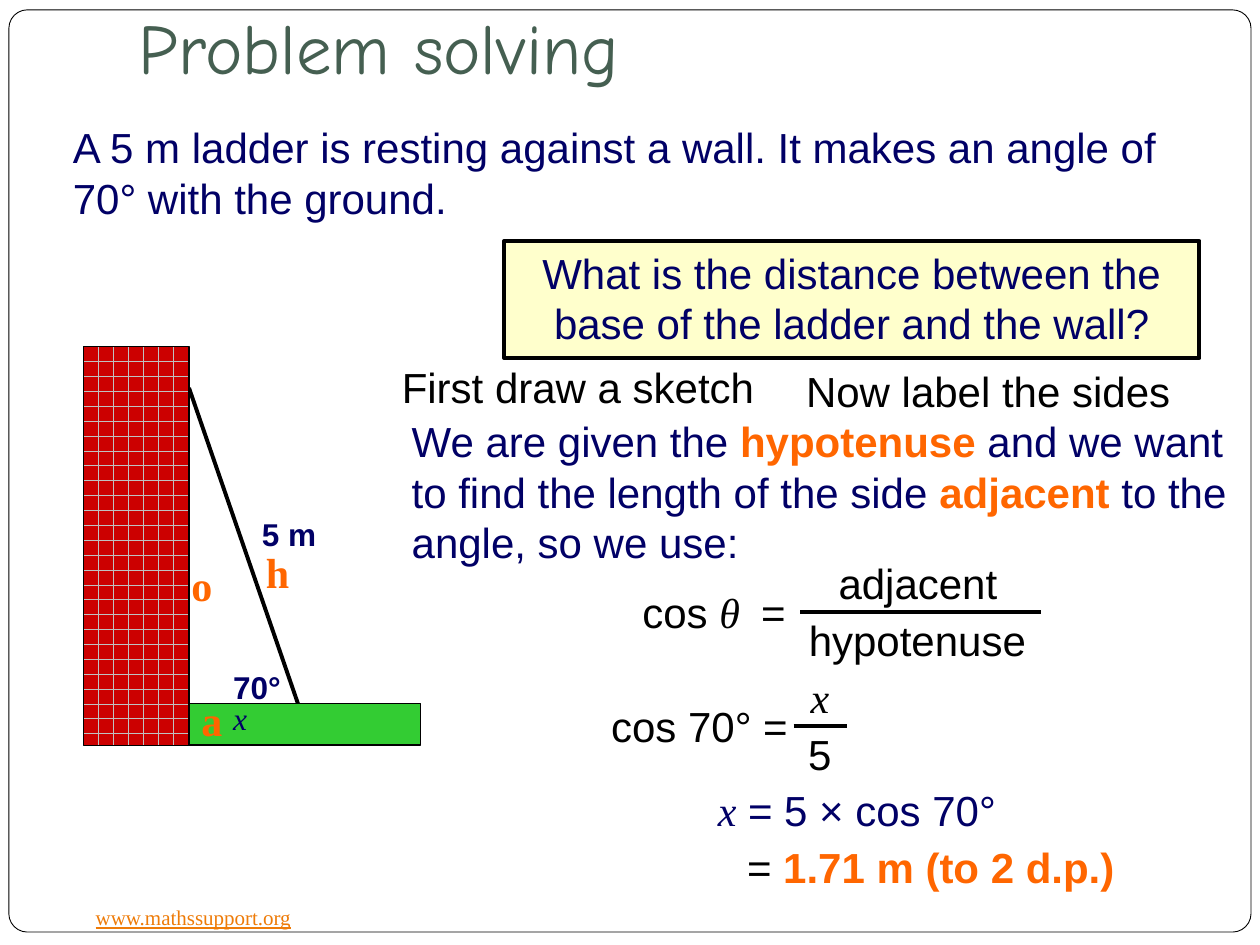
from dataclasses import dataclass

from lxml.etree import SubElement
from pptx import Presentation
from pptx.dml.color import RGBColor
from pptx.enum.dml import MSO_PATTERN
from pptx.enum.shapes import MSO_CONNECTOR, MSO_SHAPE
from pptx.enum.text import MSO_ANCHOR as Anchor
from pptx.enum.text import MSO_AUTO_SIZE as AutoSize
from pptx.enum.text import PP_ALIGN as Align
from pptx.oxml.ns import qn
from pptx.util import Cm, Pt


@dataclass(frozen=True)
class Theme:
    black: str = "000000"
    white: str = "FFFFFF"
    navy: str = "010066"
    orange: str = "FF6600"
    title: str = "455F51"
    link: str = "EE7B08"
    grass: str = "33CC33"
    brick: str = "CC0000"
    mortar: str = "C0C0C0"
    note: str = "FFFFCC"
    sans: str = "Arial"
    serif: str = "Times New Roman"
    hand: str = "Comic Neue"
    title_size: float = 40.5
    body_size: float = 24
    label_size: float = 18
    link_size: float = 12
    heavy: float = 2.25
    thin: float = 0.75
    hairline: float = 0.5


THEME = Theme()


def rgb(value):
    return RGBColor.from_string(value)


def style(text, color=THEME.black, size=THEME.body_size, name=THEME.sans,
          bold=False, italic=False, underline=False):
    return text, color, size, name, bold, italic, underline


def variable(text, color=THEME.black, size=THEME.body_size):
    return style(text, color, size, THEME.serif, italic=True)


def strong(text):
    return style(text, THEME.orange, bold=True)


def write(shape, pieces, align=Align.LEFT):
    paragraph = shape.text_frame.paragraphs[0]
    paragraph.alignment = align
    for text, color, size, name, bold, italic, underline in pieces:
        run = paragraph.add_run()
        run.text = text
        font = run.font
        font.name, font.size = name, Pt(size)
        font.bold, font.italic, font.underline = bold, italic, underline
        font.color.rgb = rgb(color)


def add_text(slide, left, top, width, pieces, height=1.27, wrap=False):
    box = slide.shapes.add_textbox(Cm(left), Cm(top), Cm(width), Cm(height))
    box.text_frame.word_wrap = wrap
    box.text_frame.auto_size = AutoSize.SHAPE_TO_FIT_TEXT
    write(box, pieces)


def add_block(slide, left, top, width, height, fill, weight,
              kind=MSO_SHAPE.RECTANGLE):
    shape = slide.shapes.add_shape(kind, Cm(left), Cm(top), Cm(width), Cm(height))
    shape.shadow.inherit = False
    shape.fill.solid()
    shape.fill.fore_color.rgb = rgb(fill)
    shape.line.color.rgb = rgb(THEME.black)
    shape.line.width = Pt(weight)
    return shape


def add_line(slide, start, end):
    line = slide.shapes.add_connector(
        MSO_CONNECTOR.STRAIGHT, Cm(start[0]), Cm(start[1]), Cm(end[0]), Cm(end[1]))
    line.line.color.rgb = rgb(THEME.black)
    line.line.width = Pt(THEME.heavy)
    SubElement(line._element.spPr, qn("a:effectLst"))


def add_fraction(slide, left, right, bar, numerator, denominator):
    center = (left + right) / 2
    for (width, piece), offset in ((numerator, -1.22), (denominator, -0.07)):
        add_text(slide, center - width / 2, bar + offset, width, [piece])
    add_line(slide, (left, bar), (right, bar))


def add_frame_and_title(slide):
    frame = add_block(slide, 0.18, 0.2, 25.04, 18.59, THEME.white,
                      THEME.hairline, MSO_SHAPE.ROUNDED_RECTANGLE)
    frame.adjustments[0] = 0.02
    title = slide.shapes.title
    title._element.addprevious(frame._element)
    title.left, title.top, title.width, title.height = (
        Cm(2.54), Cm(0.25), Cm(22.86), Cm(1.78))
    text_frame = title.text_frame
    text_frame.auto_size = AutoSize.NONE
    text_frame.vertical_anchor = Anchor.BOTTOM
    text_frame.margin_bottom = Cm(0.25)
    write(title, [style("Problem solving", THEME.title, THEME.title_size, THEME.hand)])
    add_text(slide, 1.68, 18.11, 4.5, [style(
        "www.mathssupport.org", THEME.link, THEME.link_size, THEME.serif,
        underline=True)], 0.76)


def add_sketch(slide):
    add_line(slide, (3.81, 7.82), (6.15, 14.6))
    add_block(slide, 3.6, 14.18, 4.88, 0.84, THEME.grass, THEME.thin)
    wall = add_block(slide, 1.69, 6.99, 2.12, 8.04, THEME.brick, THEME.thin)
    wall.fill.patterned()
    wall.fill.pattern = MSO_PATTERN.HORIZONTAL_BRICK
    wall.fill.fore_color.rgb = rgb(THEME.mortar)
    wall.fill.back_color.rgb = rgb(THEME.brick)
    for text, left, top, width in (("5 m", 5.03, 10.26, 1.6),
                                   ("70°", 4.45, 13.34, 1.47)):
        add_text(slide, left, top, width,
                 [style(text, THEME.navy, THEME.label_size, bold=True)], 1.02)
    add_text(slide, 4.45, 13.97, 0.79,
             [variable("x", THEME.navy, THEME.label_size)], 1.02)
    for side, left, top in (("h", 5.11, 10.9), ("o", 3.61, 11.15), ("a", 3.81, 13.87)):
        add_text(slide, left, top, 1.04,
                 [style(side, THEME.orange, name=THEME.serif, bold=True)])


def add_explanation(slide):
    add_text(slide, 1.22, 2.33, 22.48, [style(
        "A 5 m ladder is resting against a wall. It makes an angle of "
        "70° with the ground.", THEME.navy)], 2.29, True)
    question = add_block(slide, 10.16, 4.86, 14.02, 2.36, THEME.note, THEME.heavy)
    question.text_frame.word_wrap = True
    question.text_frame.vertical_anchor = Anchor.TOP
    write(question, [style(
        "What is the distance between the base of the ladder and the wall?",
        THEME.navy)], Align.CENTER)
    add_text(slide, 7.85, 7.16, 8.69, [style("First draw a sketch")], wrap=True)
    add_text(slide, 16, 7.24, 8.69, [style("Now label the sides")], wrap=True)
    add_text(slide, 8.05, 8.26, 17.35, [
        style("We are given the ", THEME.navy), strong("hypotenuse"),
        style(" and we want to find the length of the side ", THEME.navy),
        strong("adjacent"), style(" to the angle, so we use:", THEME.navy)], 3.3, True)


def add_working(slide):
    add_text(slide, 12.7, 11.7, 3.5, [style("cos "), variable("θ  "), style("=")])
    add_fraction(slide, 16.13, 20.98, 12.34,
                 (3.8, style("adjacent")), (5, style("hypotenuse")))
    add_text(slide, 12.07, 14, 4.3, [style("cos 70° =")])
    add_fraction(slide, 16, 17.07, 14.63, (0.89, variable("x")), (0.99, style("5")))
    add_text(slide, 14.22, 15.7, 6.3,
             [variable("x", THEME.navy), style(" = 5 × cos 70°", THEME.navy)])
    add_text(slide, 14.81, 16.84, 8.3, [style("="), strong(" 1.71 m (to 2 d.p.)")])


def main():
    presentation = Presentation()
    presentation.slide_width, presentation.slide_height = Cm(25.4), Cm(19.05)
    slide = presentation.slides.add_slide(presentation.slide_layouts[5])
    add_frame_and_title(slide)
    add_sketch(slide)
    add_explanation(slide)
    add_working(slide)
    presentation.save("out.pptx")


if __name__ == "__main__":
    main()
